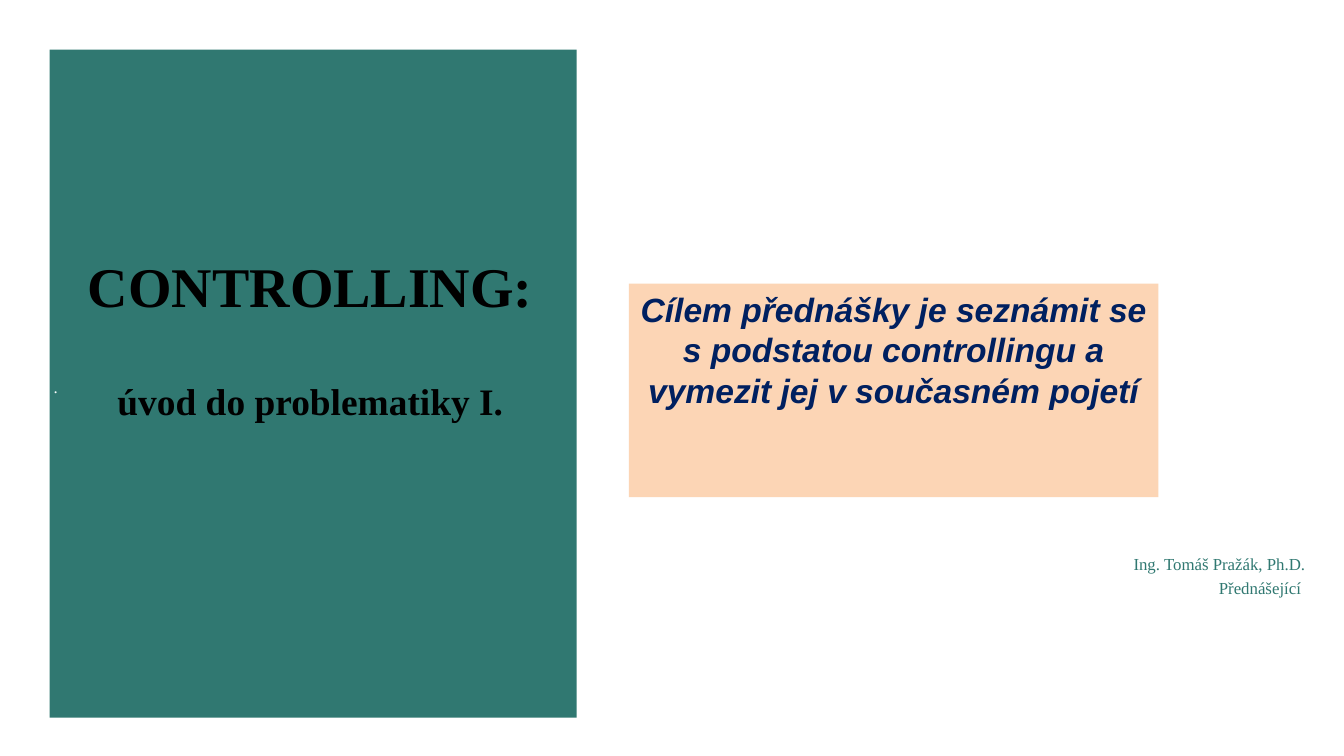
from dataclasses import dataclass

import pptx
import pptx.dml.color
import pptx.enum.shapes
import pptx.enum.text
import pptx.util

Inches = pptx.util.Inches
Pt = pptx.util.Pt
ALIGN = pptx.enum.text.PP_ALIGN

SERIF = "Times New Roman"
TEAL = "307871"
INSETS = (0.07, 0.04, 0.07, 0.04)


@dataclass
class Line:
    text: str
    size: float
    color: str
    font: str = SERIF
    bold: bool = False
    italic: bool = False
    align: int = ALIGN.LEFT
    before: float = 0


def paint(target, color: str) -> None:
    """Give a fill or a font colour its hex value."""
    target.rgb = pptx.dml.color.RGBColor.from_string(color)


def write(shape, lines: list[Line], insets: tuple = INSETS) -> None:
    frame = shape.text_frame
    frame.word_wrap = True
    frame.auto_size = pptx.enum.text.MSO_AUTO_SIZE.NONE
    frame.vertical_anchor = pptx.enum.text.MSO_ANCHOR.TOP
    (frame.margin_left, frame.margin_top,
     frame.margin_right, frame.margin_bottom) = map(Inches, insets)
    frame.text = "\n".join(line.text for line in lines)
    for par, line in zip(frame.paragraphs, lines):
        par.alignment = line.align
        par.line_spacing = 1.0
        par.space_before = Pt(line.before)
        for run in par.runs:
            font = run.font
            font.name, font.size = line.font, Pt(line.size)
            font.bold, font.italic = line.bold, line.italic
            paint(font.color, line.color)


def panel(slide, box: tuple, color: str):
    shape = slide.shapes.add_shape(
        pptx.enum.shapes.MSO_SHAPE.RECTANGLE, *map(Inches, box))
    shape.shadow.inherit = False
    shape.fill.solid()
    paint(shape.fill.fore_color, color)
    shape.line.fill.background()
    return shape


def label(slide, box: tuple, lines: list[Line], insets: tuple) -> None:
    write(slide.shapes.add_textbox(*map(Inches, box)), lines, insets)


def main() -> None:
    # Widescreen, 16 to 9
    deck = pptx.Presentation()
    deck.slide_width = Inches(10)
    deck.slide_height = Inches(10) * 9 // 16
    slide = deck.slides.add_slide(deck.slide_layouts[5])
    title = slide.shapes.title

    # Teal panel, kept behind the title
    back = panel(slide, (0.37, 0.37, 3.92, 4.97), TEAL)
    title.element.addprevious(back.element)

    # Lecture title and subtitle
    title.left, title.top, title.width, title.height = map(
        Inches, (0.55, 0.59, 3.52, 2.78))
    write(title, [
        Line("CONTROLLING:", 30, "000000", bold=True, align=ALIGN.CENTER),
        Line("úvod do problematiky I.", 20, "000000", bold=True,
             align=ALIGN.CENTER, before=32),
    ], (0.07, 1.28, 0.07, 0.04))

    # Small mark on the panel
    label(slide, (0.33, 2.44, 3.97, 2.37), [Line(".", 9, "FFFFFF")],
          (0.07, 0.36, 0.07, 0.04))

    # Aim of the lecture
    aim = panel(slide, (4.68, 2.11, 3.94, 1.59), "FCD5B5")
    write(aim, [Line(
        "Cílem přednášky je seznámit se s podstatou controllingu a "
        "vymezit jej v současném pojetí",
        18, "002060", "Arial", True, True, ALIGN.CENTER)])

    # Lecturer
    label(slide, (7.61, 4.07, 2.2, 1.26), [
        Line("Ing. Tomáš Pražák, Ph.D.", 9, TEAL, align=ALIGN.RIGHT),
        Line("Přednášející ", 9, TEAL, align=ALIGN.RIGHT, before=2),
    ], (0.1, 0.05, 0.1, 0.05))

    deck.save("out.pptx")


if __name__ == "__main__":
    main()
